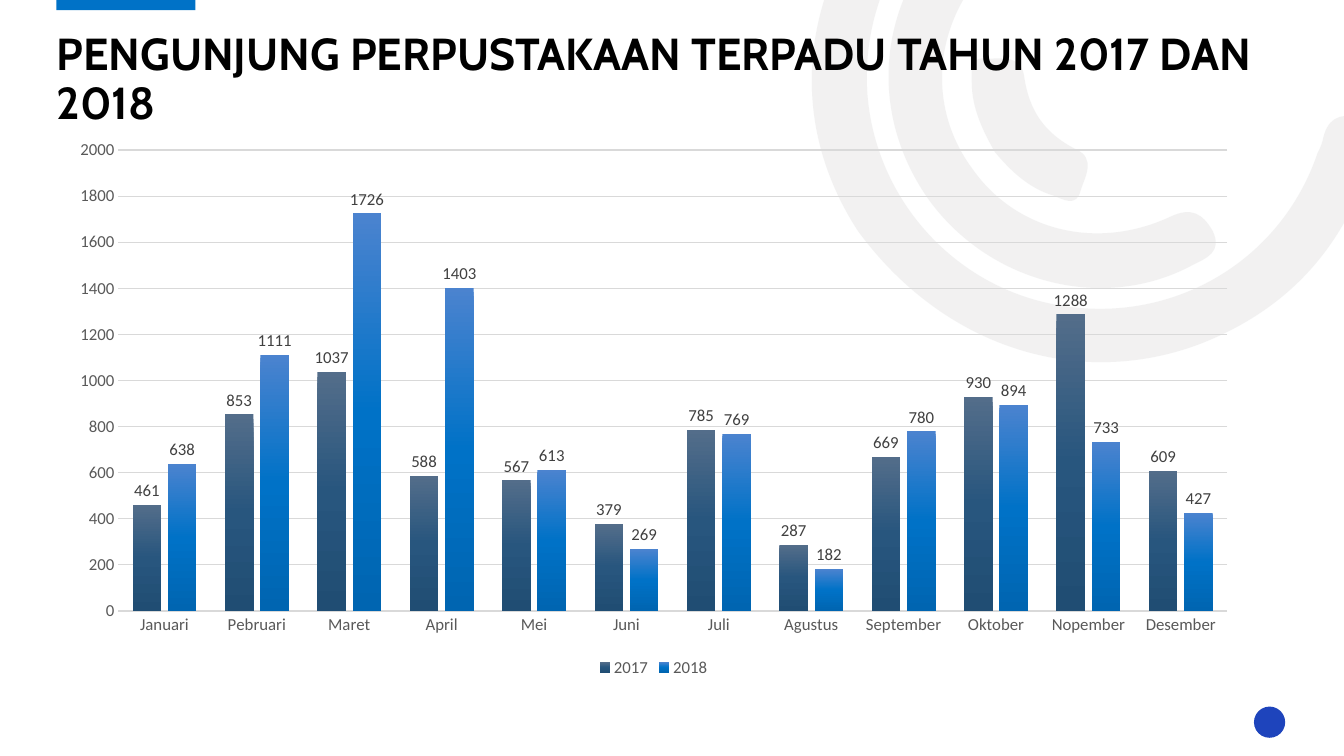
import math

import pptx
import pptx.chart.data
import pptx.dml.color
import pptx.enum.chart
import pptx.enum.shapes
import pptx.enum.text
import pptx.util
from lxml import etree
from pptx.oxml.ns import qn
from pptx.util import Inches, Pt

TITLE = "PENGUNJUNG PERPUSTAKAAN TERPADU TAHUN 2017 DAN 2018"
MONTHS = ["Januari", "Pebruari", "Maret", "April", "Mei", "Juni", "Juli",
          "Agustus", "September", "Oktober", "Nopember", "Desember"]
# year: (visitors per month, gradient colours from top to bottom)
VISITORS = {
    "2017": ([461, 853, 1037, 588, 567, 379, 785, 287, 669, 930, 1288, 609],
             ["536D8A", "28567E", "204D73"]),
    "2018": ([638, 1111, 1726, 1403, 613, 269, 769, 182, 780, 894, 733, 427],
             ["4B83CF", "0072C7", "0065B1"]),
}
# Each arc: frame before turning (left, top, width, height), start point on the
# slide, then cubic curves (two control points and an end point)
ARCS = [
    ((8.13, -2.02, 4.85, 6), (8.51, 2.29), [
        (7.99, 1.49, 7.87, 0.5, 8.38, -0.5),
        (8.9, -1.52, 9.76, -2.03, 10.9, -2.07),
        (11.05, -2.07, 11.21, -2.1, 11.31, -1.95),
        (11.44, -1.75, 11.27, -1.54, 10.98, -1.54),
        (9.67, -1.54, 8.65, -0.59, 8.6, 0.68),
        (8.56, 1.81, 9.36, 2.81, 10.46, 3.02),
        (11.6, 3.24, 12.7, 2.61, 13.07, 1.52),
        (13.09, 1.48, 13.11, 1.44, 13.12, 1.4),
        (13.16, 1.19, 13.27, 1.11, 13.49, 1.17),
        (13.73, 1.24, 13.67, 1.41, 13.61, 1.56),
        (13.34, 2.45, 12.78, 3.07, 11.91, 3.41),
        (10.7, 3.87, 9.36, 3.45, 8.51, 2.29)]),
    ((9.01, -0.78, 2.13, 4.26), (9.22, 1.99), [
        (8.62, 1.15, 8.69, 0.07, 9.4, -0.68),
        (9.51, -0.79, 9.62, -0.95, 9.8, -0.78),
        (9.95, -0.64, 9.97, -0.5, 9.79, -0.32),
        (9.25, 0.26, 9.2, 1.08, 9.65, 1.68),
        (10.08, 2.29, 10.88, 2.49, 11.61, 2.15),
        (11.82, 2.05, 11.93, 2.12, 12.03, 2.29),
        (12.13, 2.5, 11.97, 2.56, 11.83, 2.63),
        (10.96, 3.1, 9.83, 2.82, 9.22, 1.99)]),
    ((9.8, 0.37, 0.78, 1.83), (9.87, 1.51), [
        (9.75, 1.3, 9.64, 1.07, 9.64, 0.82),
        (9.64, 0.73, 9.61, 0.57, 9.76, 0.58),
        (9.92, 0.59, 10.13, 0.53, 10.16, 0.76),
        (10.21, 1.1, 10.36, 1.32, 10.67, 1.48),
        (10.88, 1.57, 10.76, 1.76, 10.72, 1.89),
        (10.68, 2.06, 10.55, 1.98, 10.45, 1.94),
        (10.21, 1.87, 10.03, 1.7, 9.87, 1.51)]),
]
ARC_ROTATION = 144.2
LEFT = 0.56


def rgb(color):
    return pptx.dml.color.RGBColor.from_string(color)


def paint(shape, color, opacity=100):
    shape.shadow.inherit = False
    shape.fill.solid()
    shape.fill.fore_color.rgb = rgb(color)
    shape.line.fill.background()
    if opacity < 100:
        color_element = shape._element.spPr.find(".//" + qn("a:srgbClr"))
        etree.SubElement(color_element, qn("a:alpha"), val=str(opacity * 1000))


def style_font(font, size, color, name="Calibri"):
    font.size, font.name, font.color.rgb = Pt(size), name, rgb(color)


def turn_back(point, frame):
    """Place of a slide point inside the frame before turning, in EMU."""
    left, top, width, height = frame
    x, y = point[0] - left - width / 2, point[1] - top - height / 2
    angle = math.radians(ARC_ROTATION)
    return (Inches(x * math.cos(angle) + y * math.sin(angle) + width / 2),
            Inches(y * math.cos(angle) - x * math.sin(angle) + height / 2))


def add_arc(slide, frame, start, curves):
    left, top, width, height = map(Inches, frame)
    builder = slide.shapes.build_freeform(left, top)
    builder.add_line_segments([(left + width, top + height)], close=True)
    shape = builder.convert_to_shape()
    shape.rotation = ARC_ROTATION
    outline = shape._element.spPr.find(".//" + qn("a:path"))
    for segment in list(outline):
        outline.remove(segment)
    steps = [("a:moveTo", [start])]
    steps += [("a:cubicBezTo", list(zip(curve[::2], curve[1::2]))) for curve in curves]
    for tag, points in steps + [("a:close", [])]:
        segment = etree.SubElement(outline, qn(tag))
        for point in points:
            x, y = turn_back(point, frame)
            etree.SubElement(segment, qn("a:pt"), x=str(x), y=str(y))
    paint(shape, "E7E6E6", 53)


def fill_gradient(series, colors):
    fill = series.format.fill
    fill.gradient()
    fill.gradient_angle = 270
    stops = series._element.find(".//" + qn("a:gsLst"))
    for stop in list(stops):
        stops.remove(stop)
    for index, color in enumerate(colors):
        position = index * 100000 // (len(colors) - 1)
        stop = etree.SubElement(stops, qn("a:gs"), pos=str(position))
        etree.SubElement(stop, qn("a:srgbClr"), val=color)


def add_visitor_chart(slide):
    kinds = pptx.enum.chart
    data = pptx.chart.data.CategoryChartData()
    data.categories = MONTHS
    for year, (values, _) in VISITORS.items():
        data.add_series(year, values)
    chart = slide.shapes.add_chart(
        kinds.XL_CHART_TYPE.COLUMN_CLUSTERED, Inches(LEFT), Inches(1.28),
        Inches(11.85), Inches(5.48), data).chart
    chart.has_title = False
    style_font(chart.font, 10, "000000")

    chart.has_legend = True
    chart.legend.position = kinds.XL_LEGEND_POSITION.BOTTOM
    chart.legend.include_in_layout = False
    style_font(chart.legend.font, 12, "595959")

    for axis in (chart.category_axis, chart.value_axis):
        axis.major_tick_mark = axis.minor_tick_mark = kinds.XL_TICK_MARK.NONE
        style_font(axis.tick_labels.font, 12, "595959")
    category_line = chart.category_axis.format.line
    category_line.color.rgb, category_line.width = rgb("D9D9D9"), Pt(1)
    value_axis = chart.value_axis
    value_axis.minimum_scale, value_axis.maximum_scale = 0, 2000
    value_axis.major_unit = 200
    value_axis.format.line.fill.background()
    grid_line = value_axis.major_gridlines.format.line
    grid_line.color.rgb, grid_line.width = rgb("D9D9D9"), Pt(0.75)

    plot = chart.plots[0]
    plot.gap_width, plot.overlap, plot.vary_by_categories = 100, -24, False
    for series in plot.series:
        fill_gradient(series, VISITORS[series.name][1])
        labels = series.data_labels
        labels.show_value = True
        labels.position = kinds.XL_LABEL_POSITION.OUTSIDE_END
        style_font(labels.font, 12, "404040")


def add_title(slide):
    frame = slide.shapes.add_textbox(
        Inches(LEFT), Inches(0.27), Inches(12.19), Inches(1.01)).text_frame
    frame.word_wrap = True
    frame.vertical_anchor = pptx.enum.text.MSO_ANCHOR.BOTTOM
    frame.margin_left = frame.margin_right = 0
    frame.margin_top = frame.margin_bottom = 0
    paragraph = frame.paragraphs[0]
    paragraph.line_spacing = 0.9
    run = paragraph.add_run()
    run.text = TITLE
    style_font(run.font, 32, "000000", "Cabin")
    run.font.bold = True


def main():
    presentation = pptx.Presentation()
    presentation.slide_width = Inches(40 / 3)
    presentation.slide_height = Inches(7.5)
    slide = presentation.slides.add_slide(presentation.slide_layouts[6])
    for frame, start, curves in ARCS:
        add_arc(slide, frame, start, curves)
    kinds = pptx.enum.shapes.MSO_SHAPE
    for kind, color, box in (
            (kinds.RECTANGLE, "0072C7", (LEFT, -0.02, 1.38, 0.12)),
            (kinds.OVAL, "1E44BC", (12.44, 7.01, 0.31, 0.31))):
        paint(slide.shapes.add_shape(kind, *map(Inches, box)), color)
    add_visitor_chart(slide)
    add_title(slide)
    presentation.save("out.pptx")


if __name__ == "__main__":
    main()
